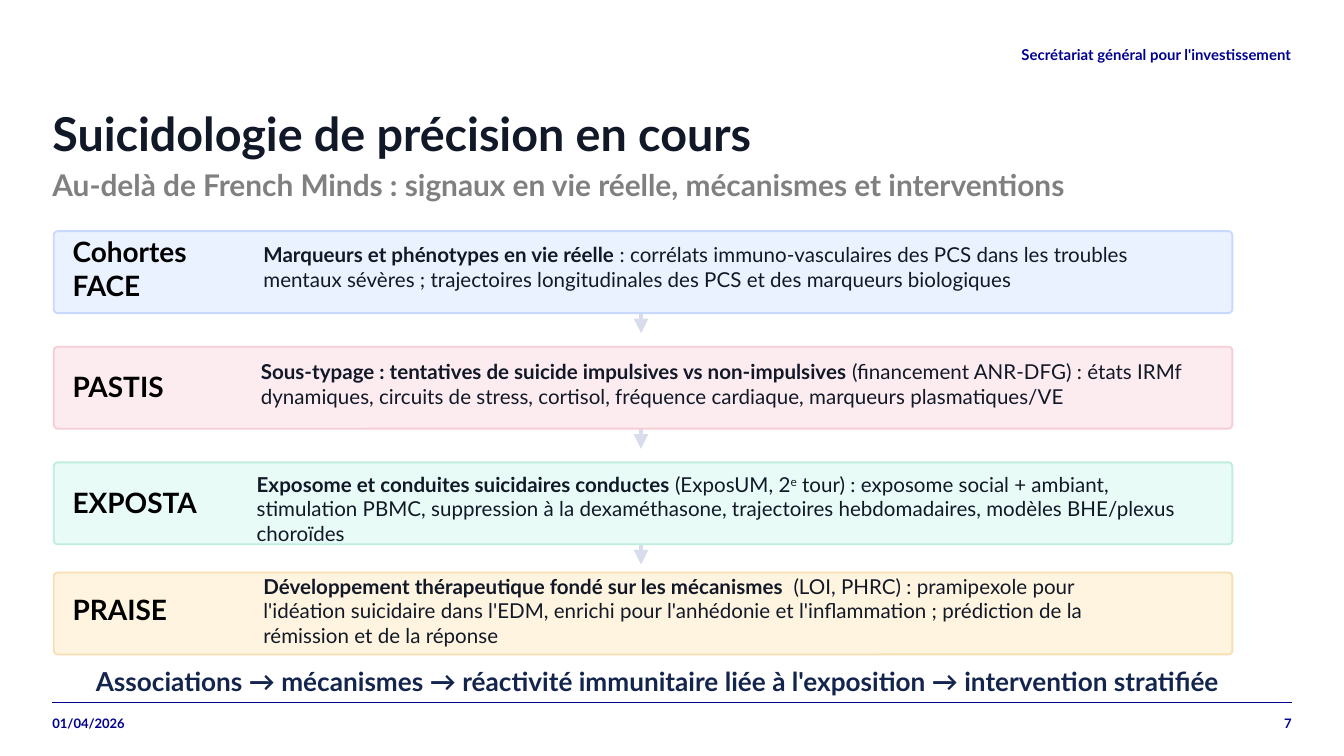
from lxml import etree
from pptx import Presentation
from pptx.dml.color import RGBColor
from pptx.enum.shapes import MSO_CONNECTOR as CONN, MSO_SHAPE as SHAPE
from pptx.enum.text import MSO_ANCHOR as ANCHOR, PP_ALIGN as ALIGN
from pptx.oxml.ns import qn
from pptx.util import Inches, Pt

NAVY, INK = "000091", "111827"
SLIDE_W = 10
LEFT, WIDTH = 0.39, 9.22
CARD_X, CARD_W, CARD_H = 0.4, 8.77, 0.61

CARDS = [
    dict(top=1.72, fill="EAF2FF", line="C8D8FF", label="Cohortes FACE",
         label_dy=0.19, body_box=(1.56, 0.13, 6.6), runs=[
             ("Marqueurs et phénotypes en vie réelle", "b"),
             (" : corrélats immuno-vasculaires des PCS dans les troubles mentaux "
              "sévères ; trajectoires longitudinales des PCS et des marqueurs "
              "biologiques", "")]),
    dict(top=2.58, fill="FDECEF", line="F6CDD7", label="PASTIS",
         label_dy=0.21, body_box=(1.54, 0.14, 6.88), runs=[
             ("Sous-typage : tentatives de suicide impulsives vs "
              "non-impulsives ", "b"),
             ("(financement ANR-DFG) : états IRMf dynamiques, circuits de stress, "
              "cortisol, fréquence cardiaque, marqueurs plasmatiques/VE", "")]),
    dict(top=3.44, fill="E8FBF7", line="BFEDE0", label="EXPOSTA",
         label_dy=0.21, body_box=(1.51, 0.21, 6.95), runs=[
             ("Exposome et conduites suicidaires conductes ", "b"),
             ("(ExposUM, 2", ""), ("e", "sup"),
             (" tour) : exposome social + ambiant, stimulation PBMC, suppression "
              "à la dexaméthasone, trajectoires hebdomadaires, modèles BHE/plexus "
              "choroïdes", "")]),
    dict(top=4.26, fill="FFF4DF", line="F6E0B3", label="PRAISE",
         label_dy=0.19, body_box=(1.56, 0.15, 6.6), runs=[
             ("Développement thérapeutique fondé sur les mécanismes  ", "b"),
             ("(LOI, PHRC) : pramipexole pour l'idéation suicidaire dans l'EDM, "
              "enrichi pour l'anhédonie et l'inflammation ; prédiction de la "
              "rémission et de la réponse", "")]),
]


def rgb(value):
    """Turn a hex string into a colour."""
    return RGBColor.from_string(value)


def add_text(s, text, box, size, color, align=ALIGN.LEFT, anchor=ANCHOR.MIDDLE,
             spacing=None):
    """Add a text box from a bold string or a list of (text, style) runs."""
    tf = s.shapes.add_textbox(*map(Inches, box)).text_frame
    tf.word_wrap = True
    tf.vertical_anchor = anchor
    tf.margin_left = tf.margin_right = tf.margin_top = tf.margin_bottom = 0
    p = tf.paragraphs[0]
    p.alignment = align
    if spacing:
        p.line_spacing = spacing
    for part, style in [(text, "b")] if isinstance(text, str) else text:
        r = p.add_run()
        r.text = part
        r.font.name = "Lato"
        r.font.size = Pt(size)
        r.font.bold = style == "b"
        r.font.color.rgb = rgb(color)
        if style == "sup":
            r._r.get_or_add_rPr().set("baseline", "30000")


def add_line(s, x1, y1, x2, y2, color, width, arrow=False):
    """Add a straight line, with an arrowhead at its end on request."""
    line = s.shapes.add_connector(CONN.STRAIGHT, *map(Inches, (x1, y1, x2, y2)))
    line.line.color.rgb = rgb(color)
    line.line.width = Pt(width)
    sp_pr = line._element.spPr
    if arrow:
        etree.SubElement(sp_pr.find(qn("a:ln")), qn("a:tailEnd"), type="triangle")
    etree.SubElement(sp_pr, qn("a:effectLst"))


def add_header(s, x, y, w):
    """Place the sender, title and subtitle."""
    add_text(s, "Secrétariat général pour l'investissement",
             (x + 1.48, y, w - 1.48, 0.39), 8, NAVY, align=ALIGN.RIGHT)
    add_text(s, "Suicidologie de précision en cours", (x, y + 0.62, w, 0.59),
             25, INK, anchor=ANCHOR.TOP, spacing=0.9)
    add_text(s, "Au-delà de French Minds : signaux en vie réelle, mécanismes et "
             "interventions", (x, y + 1.03, w, 0.49), 16, "808080",
             anchor=ANCHOR.TOP)


def add_card(s, x, y, w, h, card):
    """Place one project card with its label and description."""
    sp = s.shapes.add_shape(SHAPE.ROUNDED_RECTANGLE, *map(Inches, (x, y, w, h)))
    sp.adjustments[0] = 0.05
    sp.shadow.inherit = False
    sp.fill.solid()
    sp.fill.fore_color.rgb = rgb(card["fill"])
    sp.line.color.rgb = rgb(card["line"])
    sp.line.width = Pt(1)
    add_text(s, card["label"], (x + 0.14, y + card["label_dy"], 1.28, 0.17),
             15, "000000")
    dx, dy, body_w = card["body_box"]
    add_text(s, card["runs"], (x + dx, y + dy, body_w, 0.27), 11, INK)


def add_cascade(s, x, w, h):
    """Place the cards and the arrows that lead from each to the next."""
    for card in CARDS[:-1]:
        y = card["top"]
        add_line(s, x + 4.37, y + 0.44, x + 4.37, y + 0.76, "D7DDEA", 2.6,
                 arrow=True)
    for card in CARDS:
        add_card(s, x, card["top"], w, h, card)


def add_footer(s, x, y, w):
    """Place the conclusion, rule, date and page number."""
    add_text(s, "Associations → mécanismes → réactivité immunitaire liée à "
             "l'exposition → intervention stratifiée",
             (x - 0.12, y - 0.26, w + 0.03, 0.2), 14, "14254D",
             align=ALIGN.CENTER)
    add_line(s, x, y, x + w, y, NAVY, 0.5)
    add_text(s, "01/04/2026", (x, y, 1.34, 0.3), 7, NAVY)
    add_text(s, "7", (x + w - 0.51, y, 0.51, 0.3), 7, NAVY, align=ALIGN.RIGHT)


def main():
    """Build and save the slide."""
    prs = Presentation()
    prs.slide_width, prs.slide_height = Inches(SLIDE_W), Inches(SLIDE_W * 9 / 16)
    s = prs.slides.add_slide(prs.slide_layouts[6])
    add_header(s, LEFT, 0.21, WIDTH)
    add_cascade(s, CARD_X, CARD_W, CARD_H)
    add_footer(s, LEFT, 5.23, WIDTH)
    prs.save("out.pptx")


if __name__ == "__main__":
    main()
